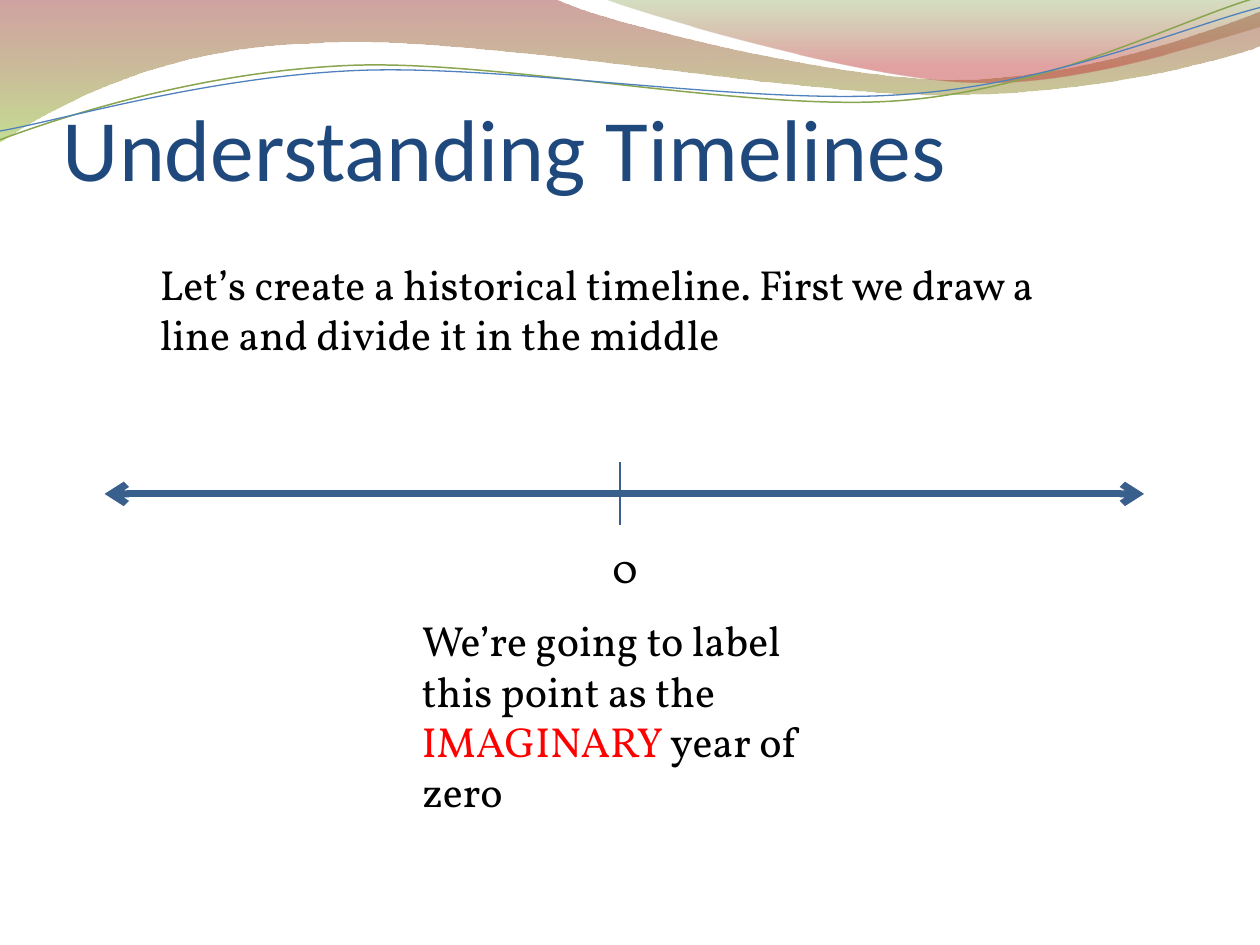
from lxml.etree import SubElement
from pptx import Presentation
from pptx.dml.color import RGBColor
from pptx.enum.shapes import MSO_CONNECTOR
from pptx.enum.text import MSO_ANCHOR, MSO_AUTO_SIZE, PP_ALIGN
from pptx.oxml.ns import qn
from pptx.util import Inches, Pt

COLORS = {
    "title": "1F497D", "text": "000000", "accent": "FF0000", "timeline": "395F8D",
    "maroon": "973330", "lime": "95C238", "olive": "769537", "red": "BE3330",
    "green_line": "89A54F", "blue_line": "4F81BD",
}

# Each wave: start point, then line points (x, y) or Bezier curves (six numbers)
LEFT_WAVE = [
    (0, 0), (4.4, -0.01), (4.76, 0.17, 6.64, 0.63, 7.58, 0.63),
    (8.53, 0.63, 9.58, 0.26, 10, 0.09), (10.01, 0.36),
    (9.83, 0.44, 8.7, 0.76, 7.46, 0.75), (6.22, 0.75, 3.82, 0.28, 2.57, 0.34),
    (1.29, 0.36, 0.46, 0.83, -0.01, 1.13),
]
RIGHT_WAVE = [
    (4.79, -0.01), (5.09, 0.11, 6.82, 0.62, 7.69, 0.65),
    (8.56, 0.69, 9.61, 0.32, 10, 0.21), (10, 0),
]
GREEN_WAVE = [
    (0, 1.11), (0.48, 0.93, 1.58, 0.57, 2.77, 0.52),
    (3.95, 0.47, 5.93, 0.89, 7.13, 0.8), (8.33, 0.71, 9.38, 0.15, 9.98, -0.02),
]
BLUE_WAVE = [
    (0, 1.04), (0.47, 0.96, 1.64, 0.61, 2.83, 0.56),
    (4.03, 0.51, 5.97, 0.84, 7.17, 0.75), (8.36, 0.67, 9.41, 0.21, 10, 0.06),
]


class SlideBuilder:
    def __init__(self, slide, colors, font="Vollkorn", size=24):
        self.slide = slide
        self.colors = colors
        self.font = font
        self.size = size

    def color(self, name):
        return RGBColor.from_string(self.colors[name])

    def wave(self, segments, closed):
        points = [(Inches(segment[-2]), Inches(segment[-1])) for segment in segments]
        builder = self.slide.shapes.build_freeform(*points[0], scale=1.0)
        builder.add_line_segments(points[1:], close=closed)
        shape = builder.convert_to_shape()
        shape.shadow.inherit = False
        # Bend the straight segments that have control points
        steps = list(shape._element.spPr.iter(qn("a:lnTo")))
        for step, segment in zip(steps, segments[1:]):
            if len(segment) == 6:
                step.tag = qn("a:cubicBezTo")
                step.clear()
                for x, y in zip(segment[::2], segment[1::2]):
                    SubElement(step, qn("a:pt"), x=str(Inches(x) - shape.left),
                               y=str(Inches(y) - shape.top))
        return shape

    def filled_wave(self, segments, stops):
        shape = self.wave(segments, True)
        shape.line.fill.background()
        shape.fill.gradient()
        shape.fill.gradient_angle = 270
        for stop, (position, color, _) in zip(shape.fill.gradient_stops, stops):
            stop.position = position
            stop.color.rgb = self.color(color)
        # Opacity of each gradient stop
        for element, (_, _, opacity) in zip(shape._element.spPr.iter(qn("a:srgbClr")), stops):
            SubElement(element, qn("a:alpha"), val=str(opacity * 1000))

    def wave_line(self, segments, color, width):
        shape = self.wave(segments, False)
        shape.fill.background()
        shape.line.color.rgb = self.color(color)
        shape.line.width = Pt(width)

    def line(self, start, end, width, arrows=False):
        ends = [Inches(value) for value in (*start, *end)]
        connector = self.slide.shapes.add_connector(MSO_CONNECTOR.STRAIGHT, *ends)
        connector.line.color.rgb = self.color("timeline")
        connector.line.width = Pt(width)
        properties = connector._element.spPr
        SubElement(properties, qn("a:effectLst"))
        if arrows:
            for tag in ("a:headEnd", "a:tailEnd"):
                SubElement(properties.find(qn("a:ln")), qn(tag), type="arrow")

    def text(self, box, runs, align=PP_ALIGN.LEFT, frame_format=None, **font_format):
        shape = self.slide.shapes.add_textbox(*[Inches(value) for value in box])
        frame = shape.text_frame
        frame_values = {"word_wrap": True, "auto_size": MSO_AUTO_SIZE.SHAPE_TO_FIT_TEXT}
        for name, value in {**frame_values, **(frame_format or {})}.items():
            setattr(frame, name, value)
        paragraph = frame.paragraphs[0]
        paragraph.alignment = align
        font_values = {"name": self.font, "size": Pt(self.size), **font_format}
        for content, color in runs:
            run = paragraph.add_run()
            run.text = content
            for name, value in font_values.items():
                setattr(run.font, name, value)
            run.font.color.rgb = self.color(color)


def main():
    presentation = Presentation()
    presentation.slide_width, presentation.slide_height = Inches(10), Inches(7.5)
    slide = presentation.slides.add_slide(presentation.slide_layouts[6])
    builder = SlideBuilder(slide, COLORS)

    # Waves along the top
    builder.filled_wave(LEFT_WAVE, [(0, "maroon", 45), (1, "lime", 55)])
    builder.filled_wave(RIGHT_WAVE, [(0, "olive", 30), (0.8, "red", 45)])
    builder.wave_line(GREEN_WAVE, "green_line", 0.85)
    builder.wave_line(BLUE_WAVE, "blue_line", 0.75)

    # Title and introduction
    title_format = {
        "auto_size": MSO_AUTO_SIZE.NONE, "vertical_anchor": MSO_ANCHOR.BOTTOM,
        "margin_left": 0, "margin_right": 0, "margin_bottom": 0,
    }
    builder.text((0.5, 0.33, 9, 1.25), [("Understanding Timelines", "title")],
                 frame_format=title_format, name="Calibri", size=Pt(50))
    builder.text((1.17, 2, 7.25, 0.91), [(
        "Let’s create a historical timeline. First we draw a line "
        "and divide it in the middle", "text")])

    # Timeline with its middle mark
    middle, level, tick = 4.92, 3.92, 0.25
    builder.line((0.83, level), (9.08, level), 4, arrows=True)
    builder.line((middle, level - tick), (middle, level + tick), 0.75)

    # Labels below the mark
    builder.text((4.67, 4.25, 0.58, 0.5), [("0", "text")], PP_ALIGN.CENTER)
    builder.text((3.25, 4.83, 3.65, 1.72), [
        ("We’re going to label this point as the ", "text"),
        ("IMAGINARY", "accent"), (" year of zero", "text"),
    ])

    presentation.save("out.pptx")


if __name__ == "__main__":
    main()
